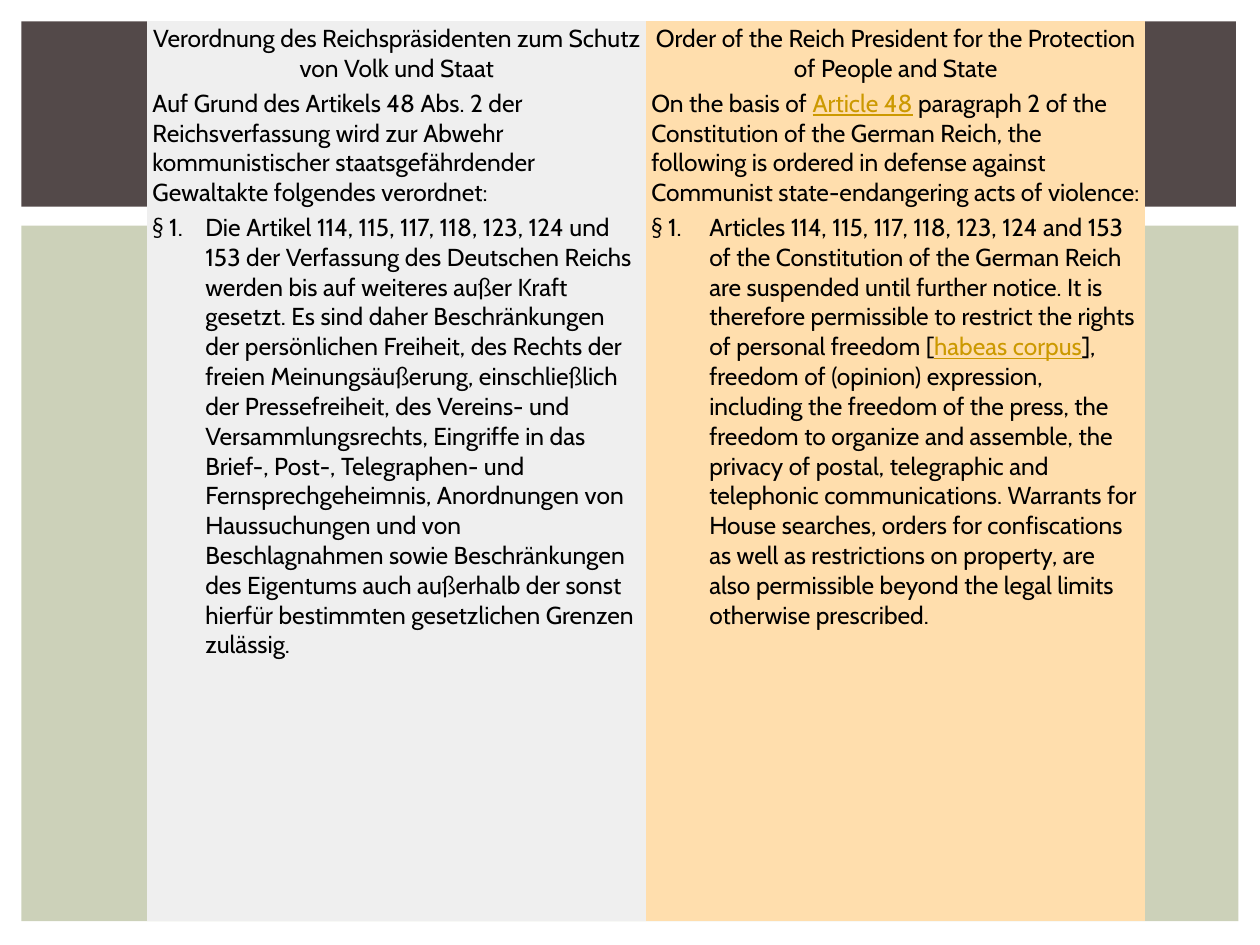
from pptx import Presentation
from pptx.dml.color import RGBColor
from pptx.enum.shapes import MSO_SHAPE as Shape
from pptx.enum.text import PP_ALIGN as Align
from pptx.util import Inches, Pt

COLORS = {
    "header_band": "534949",
    "body_band": "CCD1B9",
    "german": "EFEFEF",
    "english": "FFDEAD",
    "text": "000000",
    "term": "CC9900",
}
FONT = "Cabin"
NO_GRID_STYLE = "{2D5ABB26-0587-4C30-8999-92F81FD0307C}"
COLUMN_WIDTHS = [0.42, 3.54, 0.46, 3.5]
ROW_HEIGHTS = [0.37, 0.85, 5.64]

# Each passage is a list of runs; a run is (text, colour name)
GERMAN = {
    "title": [("Verordnung des Reichspräsidenten zum Schutz von Volk und Staat", "text")],
    "preamble": [
        ("Auf Grund des Artikels 48 Abs. 2 der Reichsverfassung wird zur Abwehr "
         "kommunistischer staatsgefährdender Gewaltakte folgendes verordnet:", "text"),
    ],
    "article": [
        ("Die Artikel 114, 115, 117, 118, 123, 124 und 153 der Verfassung des Deutschen "
         "Reichs werden bis auf weiteres außer Kraft gesetzt. Es sind daher "
         "Beschränkungen der persönlichen Freiheit, des Rechts der freien "
         "Meinungsäußerung, einschließlich der Pressefreiheit, des Vereins- und "
         "Versammlungsrechts, Eingriffe in das Brief-, Post-, Telegraphen- und "
         "Fernsprechgeheimnis, Anordnungen von Haussuchungen und von Beschlagnahmen "
         "sowie Beschränkungen des Eigentums auch außerhalb der sonst hierfür "
         "bestimmten gesetzlichen Grenzen zulässig.", "text"),
    ],
}
ENGLISH = {
    "title": [("Order of the Reich President for the Protection of People and State", "text")],
    "preamble": [
        ("On the basis of ", "text"),
        ("Article 48", "term"),
        (" paragraph 2 of the Constitution of the German Reich, the following is ordered "
         "in defense against Communist state-endangering acts of violence:", "text"),
    ],
    "article": [
        ("Articles 114, 115, 117, 118, 123, 124 and 153 of the Constitution of the German "
         "Reich are suspended until further notice. It is therefore permissible to "
         "restrict the rights of personal freedom [", "text"),
        ("habeas corpus", "term"),
        ("], freedom of (opinion) expression, including the freedom of the press, the "
         "freedom to organize and assemble, the privacy of postal, telegraphic and "
         "telephonic communications. Warrants for House searches, orders for "
         "confiscations as well as restrictions on property, are also permissible "
         "beyond the legal limits otherwise prescribed.", "text"),
    ],
}
SECTION_MARK = [("§ 1.", "text")]


def color(name):
    return RGBColor.from_string(COLORS[name])


def add_band(slide, left, top, width, height, fill):
    band = slide.shapes.add_shape(
        Shape.RECTANGLE, Inches(left), Inches(top), Inches(width), Inches(height))
    band.shadow.inherit = False
    band.fill.solid()
    band.fill.fore_color.rgb = color(fill)
    band.line.fill.background()


def add_decree_table(slide, left, top):
    frame = slide.shapes.add_table(
        len(ROW_HEIGHTS), len(COLUMN_WIDTHS), Inches(left), Inches(top),
        Inches(sum(COLUMN_WIDTHS)), Inches(sum(ROW_HEIGHTS)))
    decree = frame.table
    decree.first_row = decree.horz_banding = False
    decree._tbl.tblPr.find("{*}tableStyleId").text = NO_GRID_STYLE
    for column, width in zip(decree.columns, COLUMN_WIDTHS):
        column.width = Inches(width)
    for row, height in zip(decree.rows, ROW_HEIGHTS):
        row.height = Inches(height)
    return decree


def write_cell(cell, passage, align=Align.LEFT):
    cell.margin_left = cell.margin_right = Inches(0.04)
    cell.margin_top = cell.margin_bottom = Inches(0.02)
    paragraph = cell.text_frame.paragraphs[0]
    paragraph.alignment = align
    for text, tone in passage:
        run = paragraph.add_run()
        run.text = text
        run.font.name = FONT
        run.font.size = Pt(14)
        run.font.color.rgb = color(tone)
        run.font.underline = tone == "term"


def fill_language(decree, first_column, version, fill):
    mark_column, text_column = first_column, first_column + 1
    for row in range(len(ROW_HEIGHTS)):
        for column in (mark_column, text_column):
            cell = decree.cell(row, column)
            cell.fill.solid()
            cell.fill.fore_color.rgb = color(fill)
    # Title and preamble run across both columns of the language
    for row in (0, 1):
        decree.cell(row, mark_column).merge(decree.cell(row, text_column))
    write_cell(decree.cell(0, mark_column), version["title"], Align.CENTER)
    write_cell(decree.cell(1, mark_column), version["preamble"])
    write_cell(decree.cell(2, mark_column), SECTION_MARK)
    write_cell(decree.cell(2, text_column), version["article"])


def main():
    deck = Presentation()
    deck.slide_width, deck.slide_height = Inches(10), Inches(7.5)
    slide = deck.slides.add_slide(deck.slide_layouts[6])

    # Background bands
    add_band(slide, 0.17, 1.79, 9.66, 5.52, "body_band")
    add_band(slide, 0.17, 0.17, 9.64, 1.47, "header_band")

    # Decree in both languages, side by side
    decree = add_decree_table(slide, 1.17, 0.17)
    fill_language(decree, 0, GERMAN, "german")
    fill_language(decree, 2, ENGLISH, "english")

    deck.save("out.pptx")


if __name__ == "__main__":
    main()
